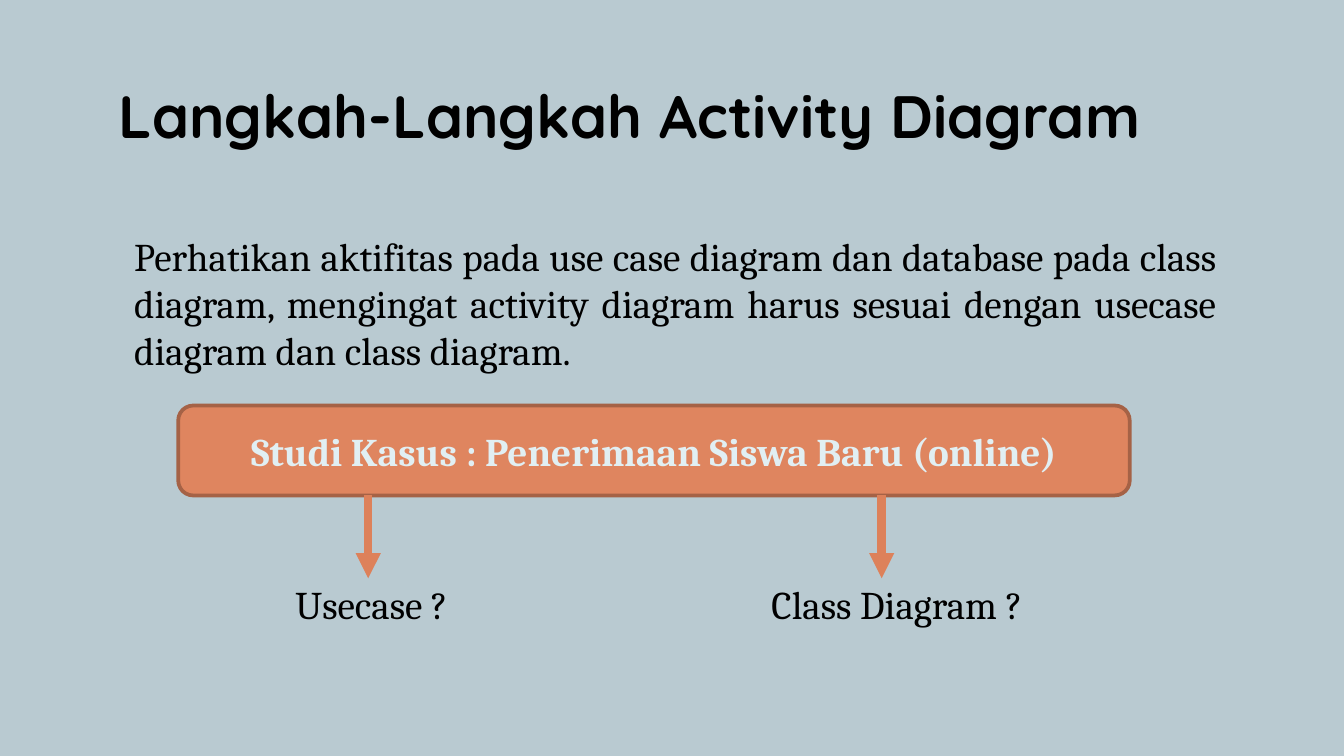
import pptx
import pptx.dml.color
import pptx.enum.shapes
import pptx.enum.text
import pptx.oxml
import pptx.oxml.ns
import pptx.util

RGBColor = pptx.dml.color.RGBColor
Inches = pptx.util.Inches
Pt = pptx.util.Pt
ALIGN = pptx.enum.text.PP_ALIGN

BACKGROUND = RGBColor(0xB9, 0xCA, 0xD1)
INK = RGBColor(0x00, 0x00, 0x00)
BANNER_FILL = RGBColor(0xDF, 0x85, 0x5F)
BANNER_EDGE = RGBColor(0xA5, 0x62, 0x46)
BANNER_INK = RGBColor(0xE1, 0xEF, 0xF3)
ARROW = RGBColor(0xDD, 0x81, 0x5A)

deck = pptx.Presentation()
deck.slide_width = Inches(10)
deck.slide_height = deck.slide_width * 9 // 16
# Grid of 100 columns and 100 rows over the slide
COL, ROW = deck.slide_width / 100, deck.slide_height / 100

slide = deck.slides.add_slide(deck.slide_layouts[6])
slide.background.fill.solid()
slide.background.fill.fore_color.rgb = BACKGROUND


def area(left, top, width, height):
    """Turn columns and rows into slide lengths."""
    return round(left * COL), round(top * ROW), round(width * COL), round(height * ROW)


def write(box, wording, align, size=21, face="Cambria", color=INK, bold=False):
    box.text_frame.word_wrap = True
    paragraph = box.text_frame.paragraphs[0]
    paragraph.text = wording
    paragraph.alignment = align
    paragraph.font.size = Pt(size)
    paragraph.font.name = face
    paragraph.font.bold = bold
    paragraph.font.color.rgb = color
    return paragraph


title = slide.shapes.add_textbox(*area(7.84, 8.71, 89, 11.2))
write(title, "Langkah-Langkah Activity Diagram", ALIGN.LEFT, 32, "Quicksand", bold=True)
title.text_frame.margin_top = title.text_frame.margin_bottom = Inches(0.1)

banner = slide.shapes.add_shape(
    pptx.enum.shapes.MSO_SHAPE.ROUNDED_RECTANGLE, *area(13.26, 53.65, 70.8, 11.9))
banner.shadow.inherit = False
banner.fill.solid()
banner.fill.fore_color.rgb = BANNER_FILL
banner.line.color.rgb = BANNER_EDGE
banner.line.width = Pt(2)
banner.text_frame.vertical_anchor = pptx.enum.text.MSO_ANCHOR.MIDDLE
case_study = write(banner, "Studi Kasus : Penerimaan Siswa Baru (online)",
                   ALIGN.CENTER, color=BANNER_INK, bold=True)
letter_edge = pptx.oxml.parse_xml(
    f'<a:ln {pptx.oxml.ns.nsdecls("a")} w="{Pt(0.75)}">'
    f'<a:solidFill><a:srgbClr val="{BANNER_INK}"/></a:solidFill></a:ln>')
case_study.runs[0].font._element.insert(0, letter_edge)

for column in (27.4, 65.6):
    left, top, _, length = area(column, 65.5, 0, 11)
    arrow = slide.shapes.add_connector(
        pptx.enum.shapes.MSO_CONNECTOR.STRAIGHT, left, top, left, top + length)
    arrow.line.color.rgb = ARROW
    arrow.line.width = Pt(4.5)
    arrow.line._get_or_add_ln().append(pptx.oxml.parse_xml(
        f'<a:tailEnd {pptx.oxml.ns.nsdecls("a")} type="triangle"/>'))
    arrow._element.spPr.append(pptx.oxml.parse_xml(
        f'<a:effectLst {pptx.oxml.ns.nsdecls("a")}/>'))

for wording, place in (
    ("Perhatikan aktifitas pada use case diagram dan database pada class diagram, "
     "mengingat activity diagram harus sesuai dengan usecase diagram dan class diagram.",
     (9, 29.87, 82.5, 20.62)),
    ("Usecase ?", (21, 75.91, 15, 8)),
    ("Class Diagram ?", (56.42, 75.91, 21.3, 14.4)),
):
    passage = slide.shapes.add_textbox(*area(*place))
    write(passage, wording, ALIGN.JUSTIFY)
    passage.text_frame.auto_size = pptx.enum.text.MSO_AUTO_SIZE.SHAPE_TO_FIT_TEXT

deck.save("out.pptx")
